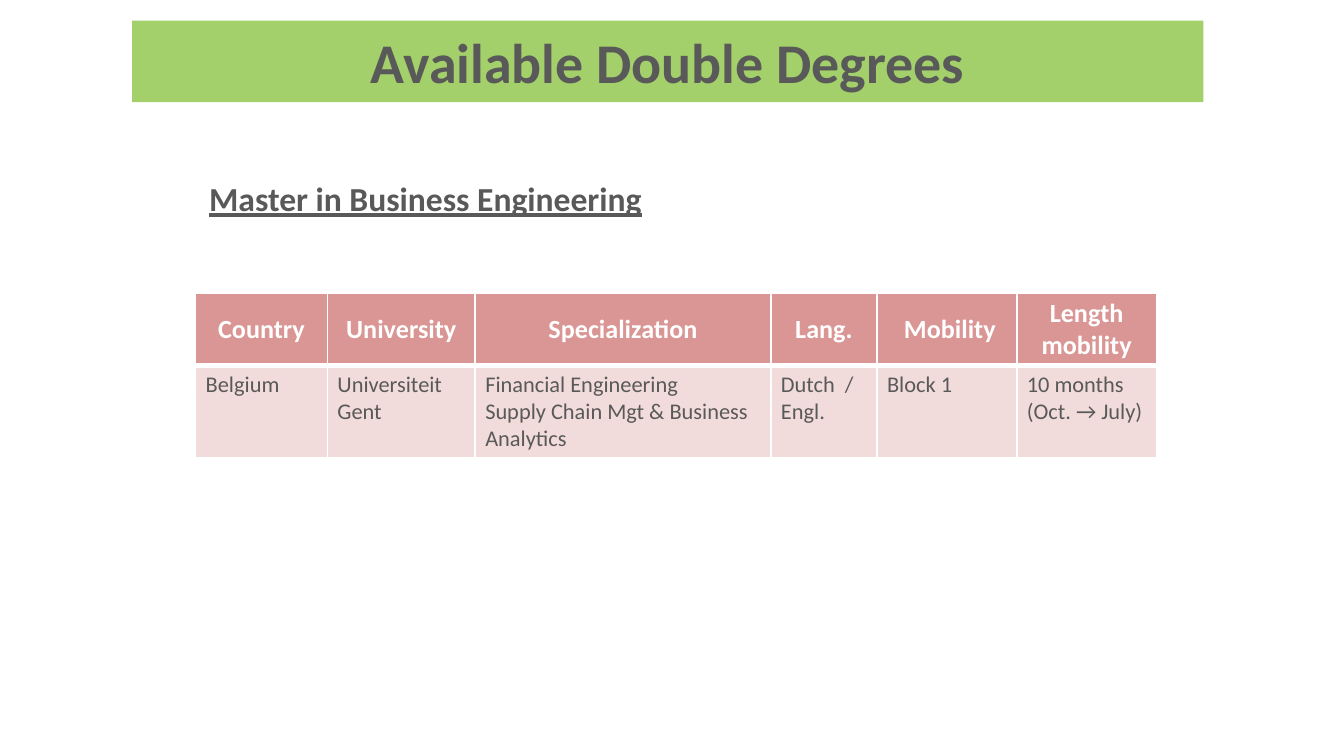
from dataclasses import dataclass

from lxml.etree import SubElement
from pptx import Presentation
from pptx.dml.color import RGBColor
from pptx.enum.shapes import MSO_SHAPE
from pptx.enum.text import MSO_ANCHOR, MSO_AUTO_SIZE, PP_ALIGN
from pptx.oxml.ns import qn
from pptx.util import Inches, Pt


@dataclass(frozen=True)
class Theme:
    face: str = "Calibri"
    ink: str = "595959"
    white: str = "FFFFFF"
    green: str = "A3D06B"
    rose: str = "D99694"
    pale: str = "F2DCDB"
    title: int = 30
    sub: int = 18
    head: int = 14
    body: int = 12


@dataclass(frozen=True)
class Box:
    """A place on the grid, in columns and rows."""
    col: float
    row: float
    wide: float
    high: float

    def place(self) -> tuple:
        return tuple(grid(n) for n in (self.col, self.row, self.wide, self.high))


@dataclass(frozen=True)
class Field:
    """A table column: its width on the grid, heading and lines of text."""
    wide: float
    head: str
    lines: tuple


@dataclass(frozen=True)
class Look:
    size: int
    color: str
    bold: bool = False
    line: bool = False
    align: PP_ALIGN = PP_ALIGN.LEFT


THEME = Theme()
COLS, ROWS = 100, 56.25  # square grid, ten units to the inch

FIELDS = (
    Field(9.8, "Country", ("Belgium",)),
    Field(11, "University", ("Universiteit Gent",)),
    Field(22, "Specialization",
          ("Financial Engineering", "Supply Chain Mgt & Business Analytics")),
    Field(7.9, "Lang.", ("Dutch  / Engl.",)),
    Field(10.4, " Mobility", ("Block 1",)),
    Field(10.4, "Length mobility", ("10 months", "(Oct. → July)")),
)
HIGHS = (5.3, 6.8)


def grid(units: float) -> int:
    return Inches(units / 10)


def rgb(color: str) -> RGBColor:
    return RGBColor.from_string(color)


def write(frame, lines: tuple, look: Look) -> None:
    for i, text in enumerate(lines):
        para = frame.add_paragraph() if i else frame.paragraphs[0]
        para.text = text
        para.alignment = look.align
        font = para.font
        font.name, font.size = THEME.face, Pt(look.size)
        font.bold, font.underline = look.bold, look.line
        font.color.rgb = rgb(look.color)


def border(cell, top: int, bottom: int) -> None:
    props = cell._tc.get_or_add_tcPr()
    sides = (("L", 1), ("R", 1), ("T", top), ("B", bottom))
    for i, (side, width) in enumerate(sides):
        edge = SubElement(props, qn(f"a:ln{side}"), w=str(Pt(width)))
        fill = SubElement(edge, qn("a:solidFill"))
        SubElement(fill, qn("a:srgbClr"), val=THEME.white)
        props.insert(i, edge)  # borders come before the cell fill


def paint(cell, lines: tuple, fill: str, look: Look) -> None:
    cell.fill.solid()
    cell.fill.fore_color.rgb = rgb(fill)
    cell.margin_left = cell.margin_right = grid(0.75)
    cell.margin_top = cell.margin_bottom = grid(0.38)
    write(cell.text_frame, lines, look)


def banner(slide, box: Box, text: str) -> None:
    shape = slide.shapes.add_shape(MSO_SHAPE.RECTANGLE, *box.place())
    shape.shadow.inherit = False
    shape.fill.solid()
    shape.fill.fore_color.rgb = rgb(THEME.green)
    shape.line.fill.background()
    frame = shape.text_frame
    frame.word_wrap = True
    frame.auto_size = MSO_AUTO_SIZE.SHAPE_TO_FIT_TEXT
    frame.vertical_anchor = MSO_ANCHOR.TOP
    write(frame, (text,),
          Look(THEME.title, THEME.ink, bold=True, align=PP_ALIGN.CENTER))


def label(slide, box: Box, text: str) -> None:
    frame = slide.shapes.add_textbox(*box.place()).text_frame
    frame.word_wrap = False
    frame.auto_size = MSO_AUTO_SIZE.SHAPE_TO_FIT_TEXT
    write(frame, (text,), Look(THEME.sub, THEME.ink, bold=True, line=True))


def degrees(slide, col: float, row: float) -> None:
    box = Box(col, row, sum(f.wide for f in FIELDS), sum(HIGHS))
    table = slide.shapes.add_table(len(HIGHS), len(FIELDS), *box.place()).table
    for line, high in zip(table.rows, HIGHS):
        line.height = grid(high)
    top = Look(THEME.head, THEME.white, bold=True, align=PP_ALIGN.CENTER)
    base = Look(THEME.body, THEME.ink)
    for i, field in enumerate(FIELDS):
        table.columns[i].width = grid(field.wide)
        head, body = table.cell(0, i), table.cell(1, i)
        paint(head, (field.head,), THEME.rose, top)
        head.vertical_anchor = MSO_ANCHOR.MIDDLE
        border(head, 1, 3)
        paint(body, field.lines, THEME.pale, base)
        border(body, 3, 1)


def main() -> None:
    deck = Presentation()
    deck.slide_width, deck.slide_height = grid(COLS), grid(ROWS)
    slide = deck.slides.add_slide(deck.slide_layouts[6])

    # Title band
    banner(slide, Box(9.84, 1.54, 79.7, 6.06), "Available Double Degrees")
    # Table of degrees
    degrees(slide, 14.56, 21.8)
    # Name of the programme
    label(slide, Box(14.58, 12.76, 34.4, 4), "Master in Business Engineering")

    deck.save("out.pptx")


if __name__ == "__main__":
    main()
